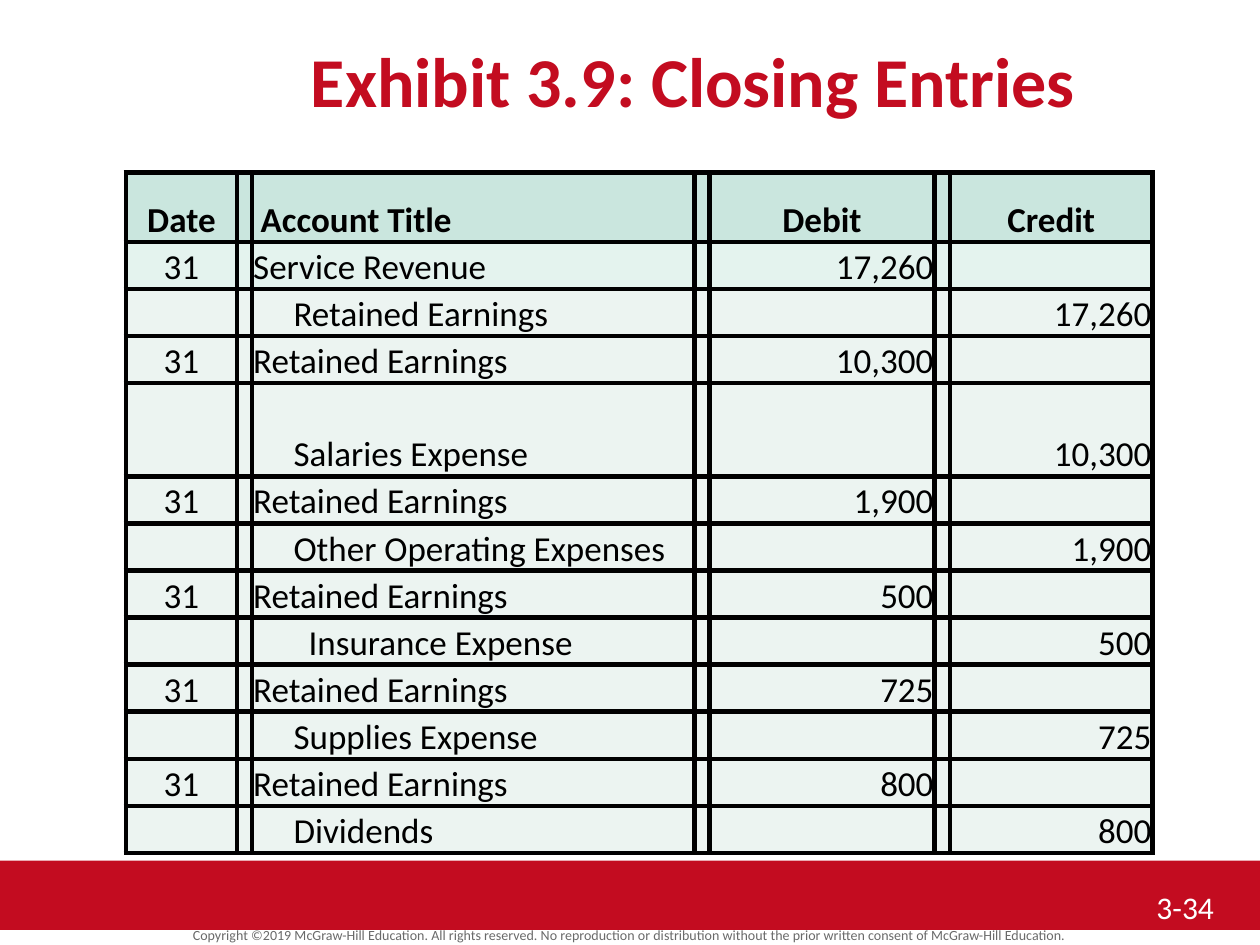
from lxml import etree
from pptx import Presentation
from pptx import util as u
from pptx.dml.color import RGBColor
from pptx.enum import shapes, text
from pptx.oxml import ns

COLORS = {"red": "C30C20", "white": "FFFFFF", "grey": "6A6A6A", "black": "000000",
          "header": "CAE6DE", "first": "E4F3EE", "body": "ECF4F1"}
ALIGN = text.PP_ALIGN
COLUMN_WIDTHS = [0.88, 0.12, 3.51, 0.12, 1.79, 0.12, 1.61]
COLUMN_ALIGNS = {0: ALIGN.CENTER, 2: ALIGN.LEFT, 4: ALIGN.RIGHT, 6: ALIGN.RIGHT}
HEADER_HEIGHT, ROW_HEIGHT, TALL_HEIGHT = 0.55, 0.374, 0.74
TALL_ROW = 4
HEADINGS = ["Date", "Account Title", "Debit", "Credit"]
ENTRIES = [
    ("Service Revenue", "Retained Earnings", "17,260", 0.32),
    ("Retained Earnings", "Salaries Expense", "10,300", 0.32),
    ("Retained Earnings", "Other Operating Expenses", "1,900", 0.32),
    ("Retained Earnings", "Insurance Expense", "500", 0.44),
    ("Retained Earnings", "Supplies Expense", "725", 0.32),
    ("Retained Earnings", "Dividends", "800", 0.32),
]


def color(name):
    """Return the named colour."""
    return RGBColor.from_string(COLORS[name])


def format_paragraph(paragraph, size, color_name, align=ALIGN.LEFT, bold=False):
    """Set the alignment and font of a paragraph."""
    paragraph.alignment = align
    font = paragraph.font
    font.name, font.size, font.bold = "Calibri", u.Pt(size), bold
    font.color.rgb = color(color_name)


def add_title(slide, left, top, width, height):
    """Place and format the title."""
    title = slide.shapes.title
    title.left, title.top, title.width, title.height = map(u.Inches, (left, top, width, height))
    frame = title.text_frame
    frame.text = "Exhibit 3.9: Closing Entries"
    frame.auto_size = text.MSO_AUTO_SIZE.NONE
    frame.vertical_anchor = text.MSO_ANCHOR.TOP
    format_paragraph(frame.paragraphs[0], 40, "red", ALIGN.CENTER, True)


def add_label(slide, words, box, size, color_name, align, anchor):
    """Add a one-line text box and return its paragraph."""
    label = slide.shapes.add_textbox(*map(u.Inches, box))
    frame = label.text_frame
    frame.word_wrap = True
    frame.vertical_anchor = anchor
    frame.text = words
    format_paragraph(frame.paragraphs[0], size, color_name, align)
    return frame.paragraphs[0]


def add_footer(slide, left, top, width, height):
    """Add the red band with the page number and the copyright line below it."""
    band = slide.shapes.add_shape(shapes.MSO_SHAPE.RECTANGLE,
                                  *map(u.Inches, (left, top, width, height)))
    band.shadow.inherit = False
    band.fill.solid()
    band.fill.fore_color.rgb = color("red")
    band.line.fill.background()
    notice = add_label(
        slide, "Copyright ©2019 McGraw-Hill Education. All rights reserved. No reproduction or "
        "distribution without the prior written consent of McGraw-Hill Education.",
        (left, top + 0.51, width, 0.19), 8, "grey", ALIGN.CENTER, text.MSO_ANCHOR.MIDDLE)
    notice.line_spacing = 0.8
    add_label(slide, "3-34", (left + width - 0.92, top + 0.17, 0.92, 0.42),
              18, "white", ALIGN.LEFT, text.MSO_ANCHOR.TOP)


def add_borders(cell):
    """Draw a black border on each side of a cell."""
    properties = cell._tc.get_or_add_tcPr()
    for index, side in enumerate(("lnL", "lnR", "lnT", "lnB")):
        line = etree.Element(ns.qn(f"a:{side}"), w=str(u.Pt(3)))
        fill = etree.SubElement(line, ns.qn("a:solidFill"))
        etree.SubElement(fill, ns.qn("a:srgbClr"), val=COLORS["black"])
        properties.insert(index, line)


def fill_cell(cell, words, fill_name, align, bold=False, indent=0):
    """Write and format one table cell."""
    cell.margin_left = u.Inches(0.01 + indent)
    cell.margin_right = cell.margin_top = u.Inches(0.01)
    cell.margin_bottom = 0
    cell.vertical_anchor = text.MSO_ANCHOR.BOTTOM
    cell.fill.solid()
    cell.fill.fore_color.rgb = color(fill_name)
    add_borders(cell)
    cell.text = words
    paragraph = cell.text_frame.paragraphs[0]
    paragraph.line_spacing = 1.07
    format_paragraph(paragraph, 20, "black", align, bold)


def journal_rows():
    """Return the words and account indent of each row."""
    rows = [(HEADINGS, 0.06)]
    for debited, credited, amount, indent in ENTRIES:
        rows.append((["31", debited, amount, ""], 0))
        rows.append((["", credited, "", amount], indent))
    return rows


def add_journal(slide, left, top):
    """Add the table of closing entries, with a narrow gap column between fields."""
    rows = journal_rows()
    heights = [HEADER_HEIGHT] + [ROW_HEIGHT] * (len(rows) - 1)
    heights[TALL_ROW] = TALL_HEIGHT
    frame = slide.shapes.add_table(
        len(rows), len(COLUMN_WIDTHS), u.Inches(left), u.Inches(top),
        u.Inches(sum(COLUMN_WIDTHS)), u.Inches(sum(heights)))
    table = frame.table
    table.first_row = table.horz_banding = False
    for column, width in zip(table.columns, COLUMN_WIDTHS):
        column.width = u.Inches(width)
    for row_index, (words, indent) in enumerate(rows):
        table.rows[row_index].height = u.Inches(heights[row_index])
        is_header = row_index == 0
        fill_name = {0: "header", 1: "first"}.get(row_index, "body")
        for column_index in range(len(COLUMN_WIDTHS)):
            is_gap = column_index % 2 == 1
            align = COLUMN_ALIGNS.get(column_index, ALIGN.LEFT)
            if is_header and column_index > 2:
                align = ALIGN.CENTER
            fill_cell(table.cell(row_index, column_index),
                      "" if is_gap else words[column_index // 2], fill_name, align,
                      is_header, indent if column_index == 2 else 0)


def main():
    """Build and save the slide."""
    presentation = Presentation()
    presentation.slide_width, presentation.slide_height = u.Inches(10), u.Inches(7.5)
    slide = presentation.slides.add_slide(presentation.slide_layouts.get_by_name("Title Only"))
    add_footer(slide, 0, 6.83, 10, 0.55)
    add_title(slide, 1, 0.25, 9, 0.67)
    add_journal(slide, 1, 1.37)
    presentation.save("out.pptx")


if __name__ == "__main__":
    main()
